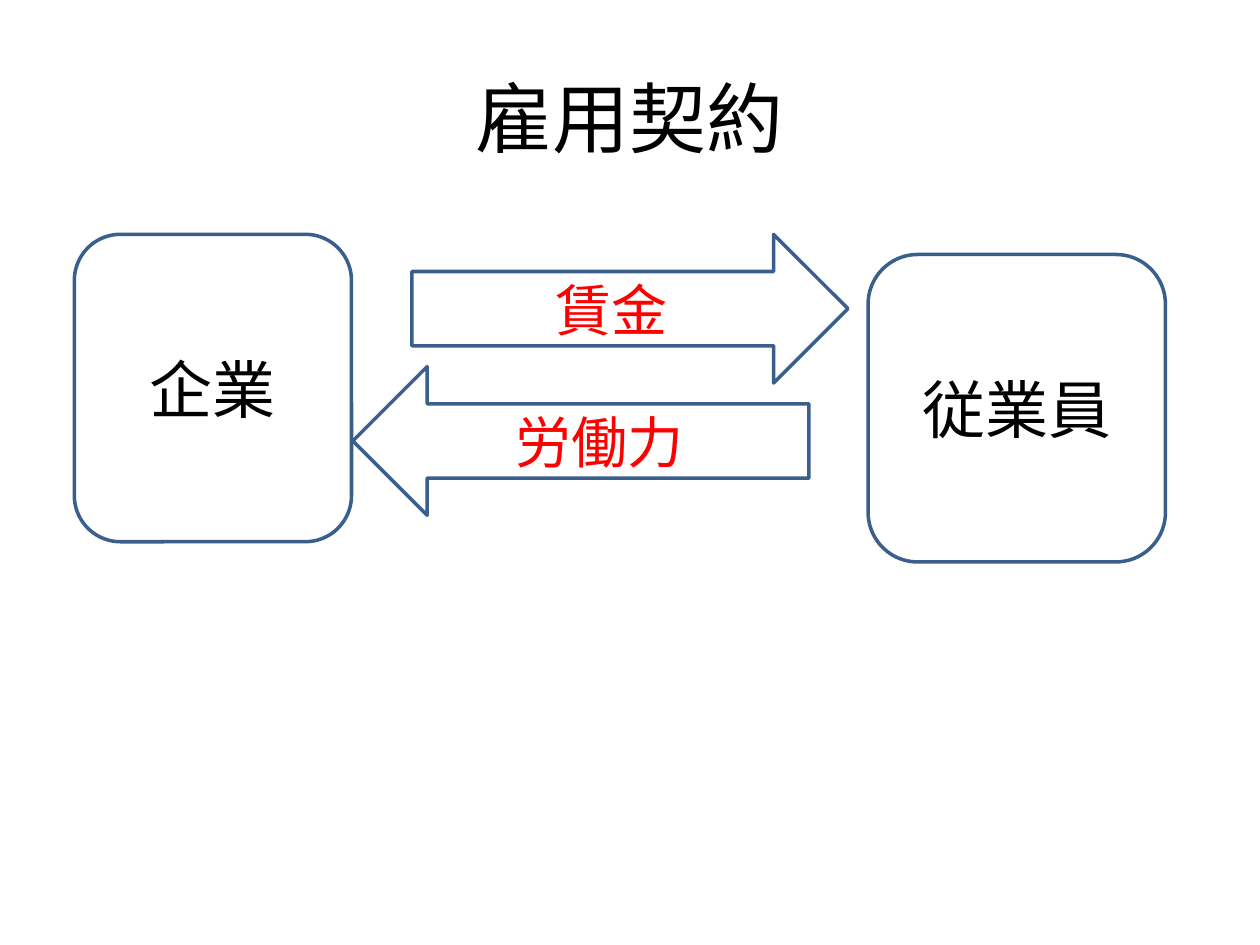
from dataclasses import dataclass

from pptx import Presentation
from pptx.dml.color import RGBColor
from pptx.enum.shapes import MSO_SHAPE
from pptx.enum.text import MSO_ANCHOR, PP_ALIGN
from pptx.util import Inches, Pt


@dataclass(frozen=True)
class Theme:
    font: str = "Calibri"
    text: RGBColor = RGBColor(0x00, 0x00, 0x00)
    accent: RGBColor = RGBColor(0xFF, 0x00, 0x00)
    outline: RGBColor = RGBColor(0x3A, 0x5F, 0x8C)
    title_size: int = 44
    party_size: int = 36
    flow_size: int = 32
    line_width: int = 2


THEME = Theme()


def write_text(shape, text, *, size, color=THEME.text):
    """Put one centred line of text in a shape."""
    tf = shape.text_frame
    tf.word_wrap = True
    tf.vertical_anchor = MSO_ANCHOR.MIDDLE
    p = tf.paragraphs[0]
    p.alignment = PP_ALIGN.CENTER
    r = p.add_run()
    r.text = text
    r.font.name = THEME.font
    r.font.size = Pt(size)
    r.font.color.rgb = color


def add_title(s, text):
    sp = s.shapes.title
    sp.left, sp.top = Inches(0.5), Inches(0.3)
    sp.width, sp.height = Inches(9), Inches(1.25)
    write_text(sp, text, size=THEME.title_size)


def add_outline(s, kind, left, top, width, height):
    """Add an unfilled preset shape with the theme outline."""
    sp = s.shapes.add_shape(kind, Inches(left), Inches(top), Inches(width), Inches(height))
    sp.shadow.inherit = False
    sp.fill.background()
    sp.line.color.rgb = THEME.outline
    sp.line.width = Pt(THEME.line_width)
    return sp


def add_party(s, text, left, top, width):
    sp = add_outline(s, MSO_SHAPE.ROUNDED_RECTANGLE, left, top, width, 2.44)
    write_text(sp, text, size=THEME.party_size)


def add_flow(s, text, kind, left, top, width):
    sp = add_outline(s, kind, left, top, width, 1.18)
    write_text(sp, text, size=THEME.flow_size, color=THEME.accent)


def main():
    prs = Presentation()
    prs.slide_width, prs.slide_height = Inches(10), Inches(7.5)
    s = prs.slides.add_slide(prs.slide_layouts[5])  # title only
    add_title(s, "雇用契約")

    # The two parties to the contract
    add_party(s, "企業", 0.59, 1.86, 2.2)
    add_party(s, "従業員", 6.89, 2.02, 2.36)

    # What they exchange
    add_flow(s, "賃金", MSO_SHAPE.RIGHT_ARROW, 3.27, 1.86, 3.46)
    add_flow(s, "労働力", MSO_SHAPE.LEFT_ARROW, 2.8, 2.91, 3.62)

    prs.save("out.pptx")


if __name__ == "__main__":
    main()
